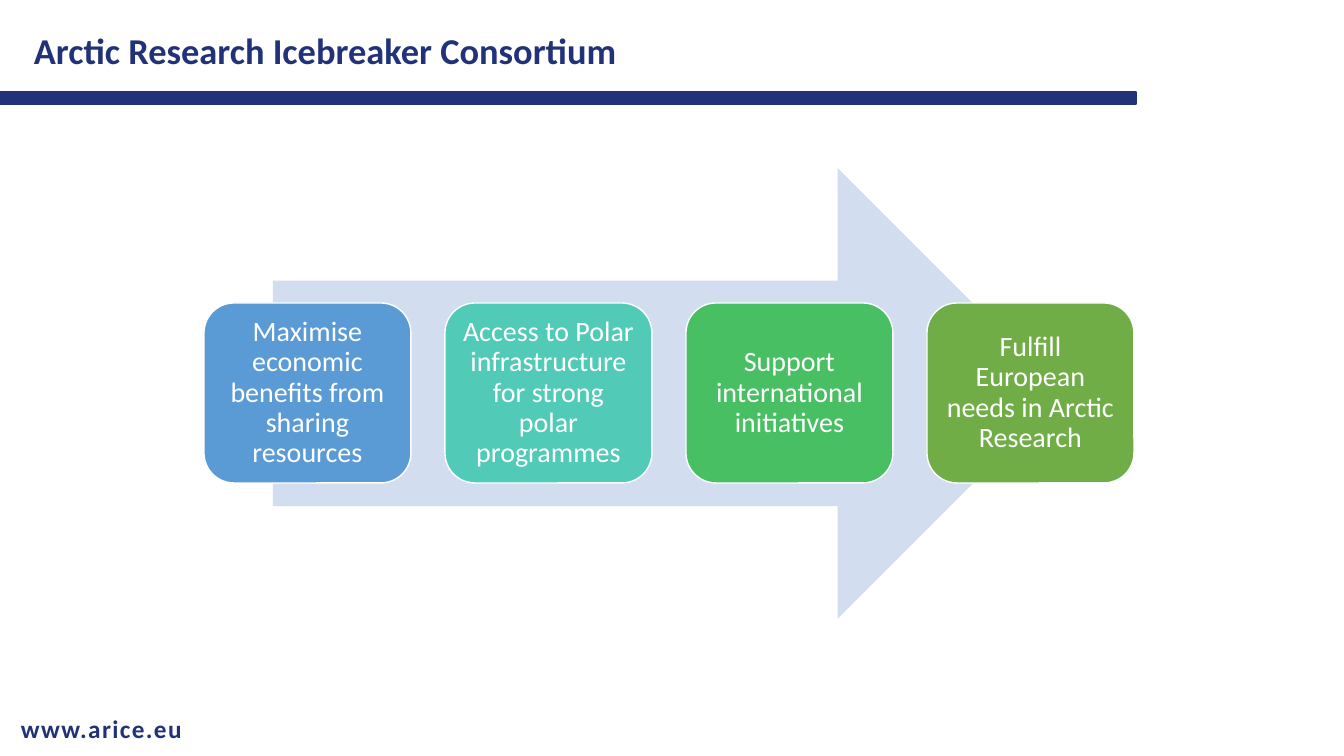
import pptx
import pptx.util
import pptx.dml.color
import pptx.enum.shapes
import pptx.enum.text

EMU_PER_PX = 914400 / 100.8
NAVY = "213278"
WHITE = "FFFFFF"
SHAPE = pptx.enum.shapes.MSO_SHAPE


def px(*lengths):
    return [pptx.util.Emu(round(length * EMU_PER_PX)) for length in lengths]


def rgb(hex_code):
    return pptx.dml.color.RGBColor.from_string(hex_code)


deck = pptx.Presentation()
deck.slide_width, deck.slide_height = px(1344, 756)
slide = deck.slides.add_slide(deck.slide_layouts[6])

# Rule under the heading
rule = slide.shapes.add_shape(SHAPE.RECTANGLE, *px(0, 92, 1136, 12))
rule.shadow.inherit = False
rule.fill.solid()
rule.fill.fore_color.rgb = rgb(NAVY)
rule.line.color.rgb = rgb(NAVY)
rule.line.width = pptx.util.Pt(1)

# Web address and heading: text, box, size, letter spacing in 1/100 pt
labels = [
    ("www.arice.eu", (11, 708, 202, 40), 18, 100),
    ("Arctic Research Icebreaker Consortium", (24, 23, 1038, 54), 26, 0),
]
for wording, box, size, spacing in labels:
    label = slide.shapes.add_textbox(*px(*box)).text_frame
    label.word_wrap = True
    label.auto_size = pptx.enum.text.MSO_AUTO_SIZE.SHAPE_TO_FIT_TEXT
    line = label.paragraphs[0]
    line.text = wording
    line.font.name = "Calibri"
    line.font.size = pptx.util.Pt(size)
    line.font.bold = True
    line.font.color.rgb = rgb(NAVY)
    if spacing:
        line.runs[0].font._element.set("spc", str(spacing))

# Arrow behind the goals
arrow = slide.shapes.add_shape(SHAPE.RIGHT_ARROW, *px(273, 168, 790, 451))
arrow.shadow.inherit = False
arrow.fill.solid()
arrow.fill.fore_color.rgb = rgb("D2DEEF")
arrow.line.fill.background()

# Four goals, evenly spaced
goals = [
    ("Maximise economic benefits from sharing resources", "5B9BD5"),
    ("Access to Polar infrastructure for strong polar programmes", "52CAB8"),
    ("Support international initiatives", "49BF64"),
    ("Fulfill European needs in Arctic Research", "70AD47"),
]
for index, (wording, colour) in enumerate(goals):
    goal = slide.shapes.add_shape(SHAPE.ROUNDED_RECTANGLE, *px(204 + 241 * index, 303, 207, 180))
    goal.shadow.inherit = False
    goal.fill.solid()
    goal.fill.fore_color.rgb = rgb(colour)
    goal.line.color.rgb = rgb(WHITE)
    goal.line.width = pptx.util.Pt(1)
    frame = goal.text_frame
    frame.word_wrap = True
    frame.vertical_anchor = pptx.enum.text.MSO_ANCHOR.MIDDLE
    frame.margin_left, frame.margin_top, frame.margin_right, frame.margin_bottom = px(8, 8, 8, 8)
    line = frame.paragraphs[0]
    line.text = wording
    line.alignment = pptx.enum.text.PP_ALIGN.CENTER
    line.line_spacing = 0.9
    line.font.name = "Calibri"
    line.font.size = pptx.util.Pt(20)
    line.font.color.rgb = rgb(WHITE)

deck.save("out.pptx")
